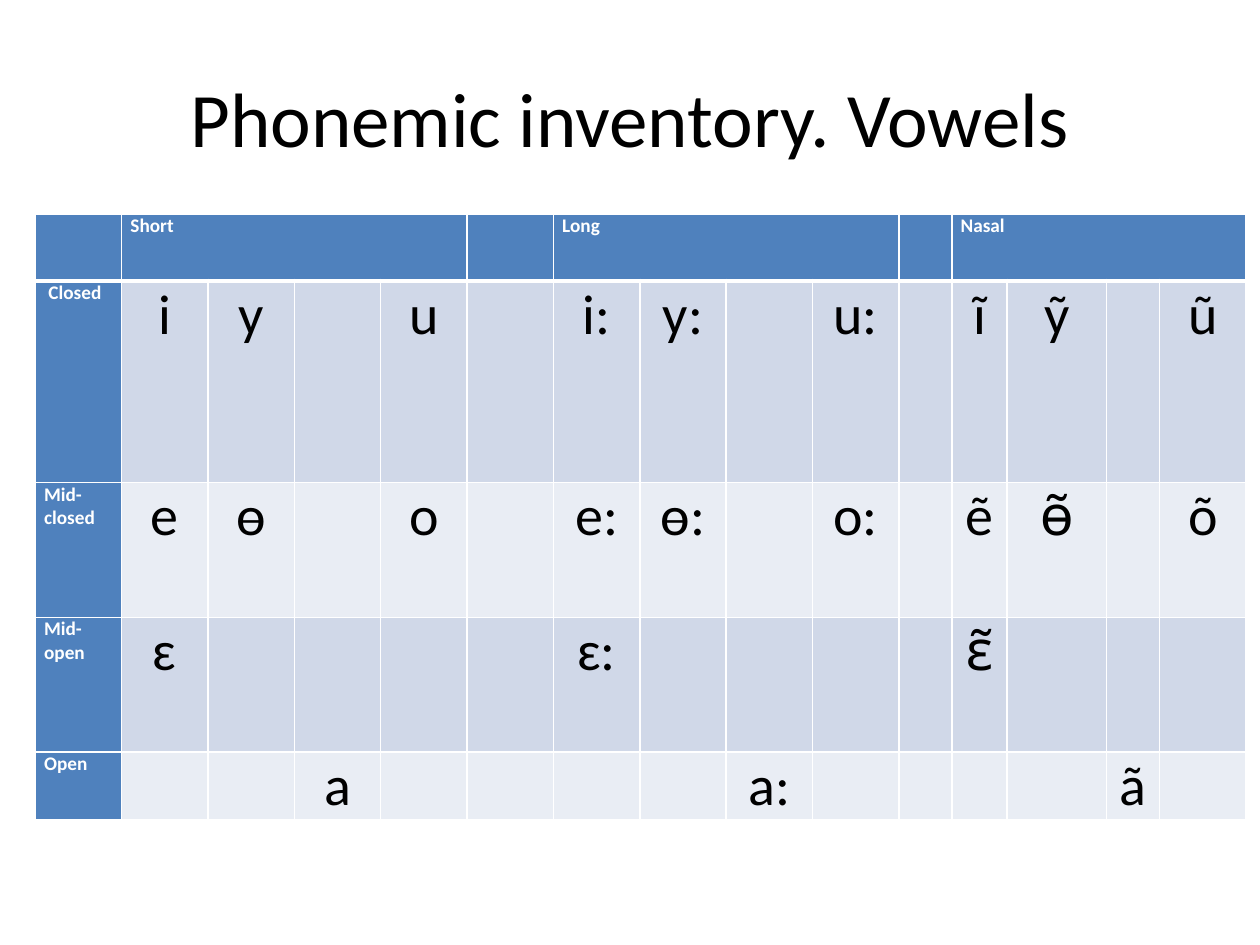
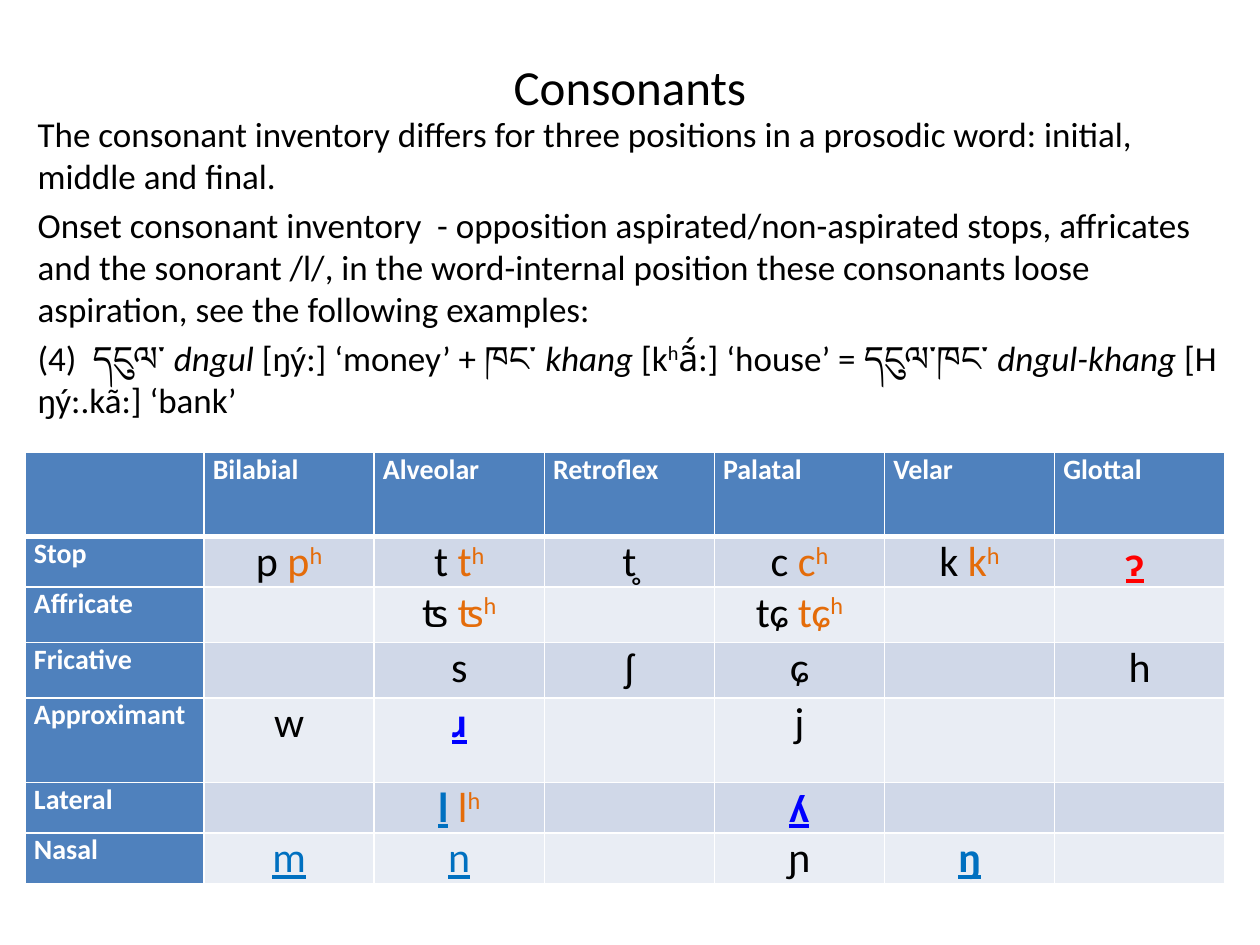
from lxml.etree import SubElement
from pptx import Presentation
from pptx.dml.color import RGBColor
from pptx.enum.text import MSO_ANCHOR, PP_ALIGN
from pptx.oxml.ns import qn
from pptx.util import Inches, Pt

FONT = "Calibri"
BLACK, WHITE = "000000", "FFFFFF"
HEADER_BLUE = "4F81BD"
BANDS = ["D0D8E8", "E9EDF4"]

# Run styles: colour, bold, italic, underline, raised
STYLES = {
    "plain": {},
    "italic": {"italic": True},
    "raised": {"raised": True},
    "aspirated": {"color": "E46C0A"},
    "aspiration": {"color": "E46C0A", "raised": True},
    "glottal": {"color": "FF0000", "bold": True, "underline": True},
    "marked": {"color": "0000FF", "bold": True, "underline": True},
    "final": {"color": "0070C0", "underline": True},
    "strong final": {"color": "0070C0", "bold": True, "underline": True},
}


def aspirated_pair(stop):
    return [(f"{stop} ", "plain"), *aspirated(stop)]


def aspirated(sound):
    return [(sound, "aspirated"), ("h", "aspiration")]


VOWEL_TITLE = "Phonemic inventory. Vowels"
VOWEL_GROUPS = ["Short", "Long", "Nasal"]
# Height, short vowels, nasal vowels; the long vowels follow from the short ones
VOWELS = [
    (" Closed", ["i", "y", "", "u"], ["ĩ", "ỹ", "", "ũ"]),
    ("Mid-closed", ["e", "ɵ", "", "o"], ["ẽ", "ɵ̃", "", "õ"]),
    ("Mid-open", ["ɛ", "", "", ""], ["ɛ̃", "", "", ""]),
    ("Open", ["", "", "a", ""], ["", "", "ã", ""]),
]
VOWEL_ROW_HEIGHTS = [0.53, 1.6, 1.07, 1.07, 0.53]
VOWEL_TABLE_WIDTH = 9.61
SPECIAL_VOWEL_COLUMNS = {10: 0.42, 11: 0.44, 12: 0.79, 13: 0.42}

CONSONANT_TITLE = "Consonants"
CONSONANT_NOTES = [
    [("The consonant inventory differs for three positions in a prosodic word: "
      "initial, middle and final.", "plain")],
    [("Onset consonant inventory  - opposition aspirated/non-aspirated stops, "
      "affricates and the sonorant /l/, in the word-internal position these "
      "consonants loose aspiration, see the following examples:", "plain")],
    [("(4)  དངུལ་ ", "plain"), ("dngul", "italic"),
     (" [ŋý:] ‘money’ + ཁང་ ", "plain"), ("khang", "italic"),
     (" [k", "plain"), ("h", "raised"),
     ("ã́:] ‘house’ = དངུལ་ཁང་ ", "plain"), ("dngul-khang", "italic"),
     (" [H ŋý:.kã:] ‘bank’", "plain")],
]
PLACES = ["", "Bilabial", "Alveolar", "Retroflex", "Palatal", "Velar", "Glottal"]
CONSONANTS = [
    ["Stop", aspirated_pair("p"), aspirated_pair("t"), "t̥", aspirated_pair("c"),
     aspirated_pair("k"), [("ɂ", "glottal"), (" ", "plain")]],
    ["Affricate", "", aspirated_pair("ʦ"), "", aspirated_pair("tɕ"), "", ""],
    ["Fricative", "", "s", "ʃ", "ɕ", "", "h"],
    ["Approximant", "w", [("ɹ", "marked")], "", "j", "", ""],
    ["Lateral", "", [("l", "strong final"), (" ", "plain"), *aspirated("l")], "",
     [("ʎ", "marked")], "", ""],
    ["Nasal", [("m", "final")], [("n", "final")], "", "ɲ",
     [("ŋ", "strong final")], ""],
]
CONSONANT_ROW_HEIGHTS = [0.67, 0.4, 0.44, 0.44, 0.67, 0.4, 0.4]
CONSONANT_COLUMN_WIDTHS = [1.42] + [1.35] * 6


def rgb(value):
    return RGBColor.from_string(value)


def write(paragraph, content, size, color=BLACK, bold=False, align=PP_ALIGN.LEFT):
    """Fill a paragraph from a string or a list of (text, style) runs."""
    paragraph.alignment = align
    font = paragraph.font
    font.name, font.size, font.bold = FONT, Pt(size), bold
    font.color.rgb = rgb(color)
    if isinstance(content, str):
        content = [(content, "plain")] if content else []
    for text, style_name in content:
        run = paragraph.add_run()
        run.text = text
        style = STYLES[style_name]
        if "color" in style:
            run.font.color.rgb = rgb(style["color"])
        for flag in ("bold", "italic", "underline"):
            if flag in style:
                setattr(run.font, flag, True)
        if "raised" in style:
            run.font._element.set("baseline", "30000")


def add_text(slide, box, paragraphs, size, anchor=MSO_ANCHOR.TOP, align=PP_ALIGN.LEFT):
    frame = slide.shapes.add_textbox(*map(Inches, box)).text_frame
    frame.word_wrap = True
    frame.vertical_anchor = anchor
    for index, content in enumerate(paragraphs):
        paragraph = frame.add_paragraph() if index else frame.paragraphs[0]
        write(paragraph, content, size, align=align)
        if index:
            paragraph.space_before = Pt(size * 0.2)


def add_title(slide, title, height, size):
    add_text(slide, (0.5, 0.3, 9, height), [title], size, MSO_ANCHOR.MIDDLE, PP_ALIGN.CENTER)


def set_borders(cell, widths):
    """Draw white borders; widths are points for left, right, top, bottom."""
    properties = cell._tc.get_or_add_tcPr()
    for side, width in zip("LRTB", widths):
        line = SubElement(properties, qn(f"a:ln{side}"), w=str(Pt(width)))
        fill = SubElement(line, qn("a:solidFill"))
        SubElement(fill, qn("a:srgbClr"), val=WHITE)


def add_sound_table(slide, left, top, widths, heights, rows, label_size, sound_size):
    """Add a table with blue header row and label column, and banded sounds."""
    table = slide.shapes.add_table(
        len(rows), len(widths), Inches(left), Inches(top),
        Inches(sum(widths)), Inches(sum(heights))).table
    table.first_row = table.horz_banding = False
    for column, width in zip(table.columns, widths):
        column.width = Inches(width)
    for row, height in zip(table.rows, heights):
        row.height = Inches(height)
    for r, contents in enumerate(rows):
        for c, content in enumerate(contents):
            cell = table.cell(r, c)
            cell.margin_left = cell.margin_right = Inches(0.07)
            cell.margin_top = cell.margin_bottom = 0
            is_label = r == 0 or c == 0
            set_borders(cell, (1, 1, 3 if r == 1 else 1, 3 if r == 0 else 1))
            cell.fill.solid()
            cell.fill.fore_color.rgb = rgb(HEADER_BLUE if is_label else BANDS[(r - 1) % 2])
            paragraph = cell.text_frame.paragraphs[0]
            if is_label:
                write(paragraph, content, label_size, WHITE, bold=True)
            else:
                write(paragraph, content, sound_size, align=PP_ALIGN.CENTER)
    return table


def add_vowel_slide(slide):
    add_title(slide, VOWEL_TITLE, 1.25, 44)
    group_starts = [1, 6, 11]
    header = [""] * 15
    for start, group in zip(group_starts, VOWEL_GROUPS):
        header[start] = group
    rows = [header]
    for height, short, nasal in VOWELS:
        long = [f"{vowel}:" if vowel else "" for vowel in short]
        rows.append([height, *short, "", *long, "", *nasal])
    special = SPECIAL_VOWEL_COLUMNS
    regular = (VOWEL_TABLE_WIDTH - sum(special.values())) / (len(header) - len(special))
    widths = [special.get(column, regular) for column in range(len(header))]
    table = add_sound_table(slide, 0.28, 1.7, widths, VOWEL_ROW_HEIGHTS, rows, 11, 32)
    for start in group_starts:
        table.cell(0, start).merge(table.cell(0, start + 3))


def add_consonant_slide(slide):
    add_title(slide, CONSONANT_TITLE, 0.77, 28)
    add_text(slide, (0.2, 0.84, 9.61, 5.86), CONSONANT_NOTES, 20)
    add_sound_table(slide, 0.2, 3.59, CONSONANT_COLUMN_WIDTHS, CONSONANT_ROW_HEIGHTS,
                    [PLACES, *CONSONANTS], 16, 24)


def main():
    presentation = Presentation()
    presentation.slide_width, presentation.slide_height = Inches(10), Inches(7.5)
    blank = presentation.slide_layouts[6]
    for add_content in (add_vowel_slide, add_consonant_slide):
        add_content(presentation.slides.add_slide(blank))
    presentation.save("out.pptx")


if __name__ == "__main__":
    main()
